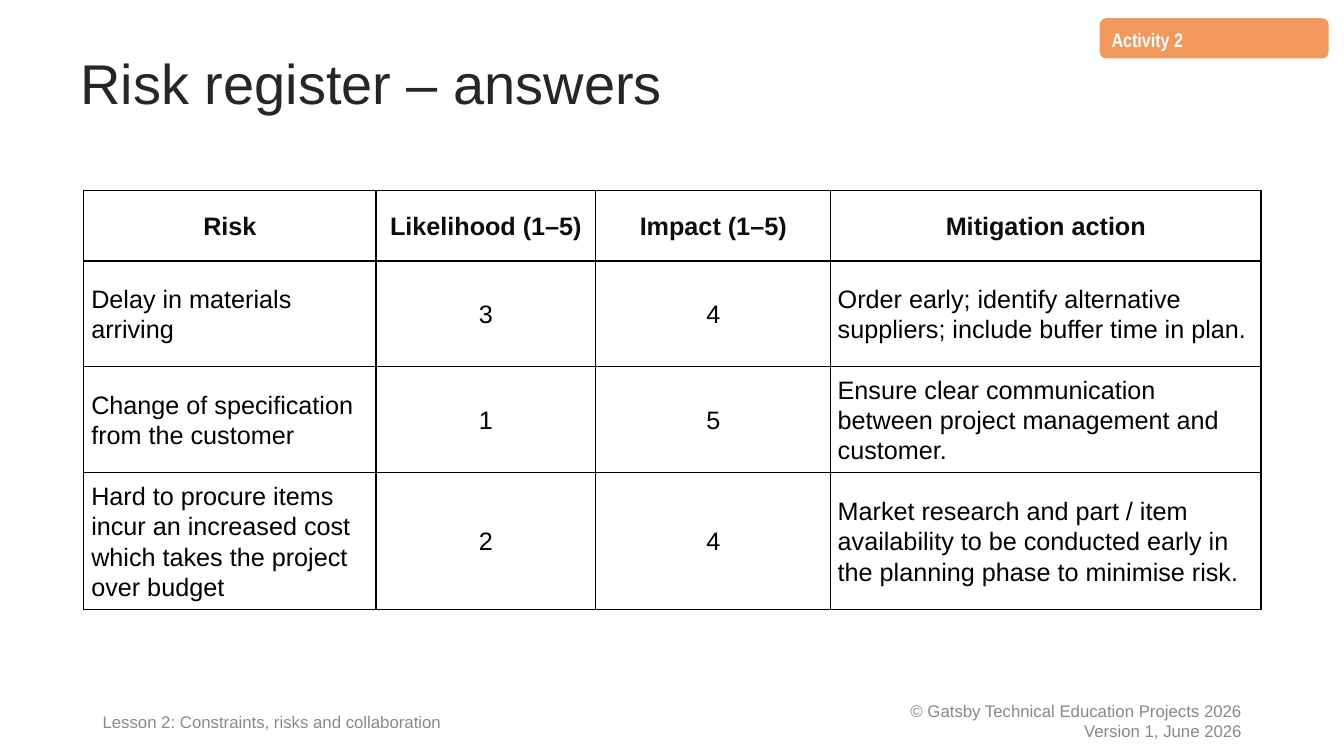
from dataclasses import dataclass

from lxml.etree import SubElement
from pptx import Presentation
from pptx.dml.color import RGBColor
from pptx.enum.shapes import MSO_SHAPE as Shape
from pptx.enum.text import MSO_ANCHOR as Anchor, PP_ALIGN as Align
from pptx.oxml.ns import qn
from pptx.util import Pt


@dataclass(frozen=True)
class Theme:
    font: str = "Arial"
    tag_font: str = "Arial Narrow"
    title: str = "262626"
    tag: str = "F1995D"
    tag_text: str = "FFFFFF"
    heading: str = "0D0D0D"
    body: str = "000000"
    border: str = "000000"
    copyright: str = "888888"
    lesson: str = "898989"
    title_size: int = 40
    tag_size: int = 14
    table_size: int = 18
    footer_size: int = 12


THEME = Theme()

HEADINGS = ["Risk", "Likelihood (1–5)", "Impact (1–5)", "Mitigation action"]
RISKS = [
    ["Delay in materials arriving", "3", "4",
     "Order early; identify alternative suppliers; include buffer time in plan."],
    ["Change of specification from the customer", "1", "5",
     "Ensure clear communication between project management and customer."],
    ["Hard to procure items incur an increased cost which takes the project over budget",
     "2", "4",
     "Market research and part / item availability to be conducted early in "
     "the planning phase to minimise risk."],
]
COLUMN_WIDTHS = [208.8, 157, 167.8, 307.4]
ROW_HEIGHTS = [50.4, 75.6, 75.6, 97.9]


def write(frame, text, size, color, font=THEME.font, bold=False,
          align=Align.LEFT, spacing=1.0):
    frame.word_wrap = True
    for index, line in enumerate(text.split("\n")):
        paragraph = frame.add_paragraph() if index else frame.paragraphs[0]
        paragraph.alignment = align
        paragraph.line_spacing = spacing
        run = paragraph.add_run()
        run.text = line
        run.font.name = font
        run.font.size = Pt(size)
        run.font.bold = bold
        run.font.color.rgb = RGBColor.from_string(color)


def add_label(slide, box, text, anchor=Anchor.MIDDLE, **style):
    frame = slide.shapes.add_textbox(*map(Pt, box)).text_frame
    frame.vertical_anchor = anchor
    write(frame, text, **style)


def add_tag(slide, box, text):
    tag = slide.shapes.add_shape(Shape.FLOWCHART_ALTERNATE_PROCESS, *map(Pt, box))
    tag.shadow.inherit = False
    tag.fill.solid()
    tag.fill.fore_color.rgb = RGBColor.from_string(THEME.tag)
    tag.line.fill.background()
    tag.text_frame.vertical_anchor = Anchor.MIDDLE
    write(tag.text_frame, text, THEME.tag_size, THEME.tag_text,
          font=THEME.tag_font, bold=True, spacing=1.08)


def set_borders(cell, width):
    properties = cell._tc.get_or_add_tcPr()
    for side in ("a:lnL", "a:lnR", "a:lnT", "a:lnB"):
        line = SubElement(properties, qn(side), w=str(Pt(width)))
        fill = SubElement(line, qn("a:solidFill"))
        SubElement(fill, qn("a:srgbClr"), val=THEME.border)


def fill_cell(cell, text, side_inset, end_inset, border, **style):
    set_borders(cell, border)
    cell.fill.background()
    cell.vertical_anchor = Anchor.MIDDLE
    cell.margin_left = cell.margin_right = Pt(side_inset)
    cell.margin_top = cell.margin_bottom = Pt(end_inset)
    write(cell.text_frame, text, THEME.table_size, spacing=1.07, **style)


def add_risk_table(slide, left, top):
    risk_table = slide.shapes.add_table(
        len(ROW_HEIGHTS), len(COLUMN_WIDTHS), Pt(left), Pt(top),
        Pt(sum(COLUMN_WIDTHS)), Pt(sum(ROW_HEIGHTS))).table
    risk_table.first_row = True
    risk_table.horz_banding = False
    for column, width in zip(risk_table.columns, COLUMN_WIDTHS):
        column.width = Pt(width)
    for row, height in zip(risk_table.rows, ROW_HEIGHTS):
        row.height = Pt(height)

    for index, heading in enumerate(HEADINGS):
        fill_cell(risk_table.cell(0, index), heading, 0.5, 0.5, 1,
                  color=THEME.heading, bold=True, align=Align.CENTER)
    for row_index, risk in enumerate(RISKS, 1):
        for index, text in enumerate(risk):
            fill_cell(risk_table.cell(row_index, index), text,
                      5.4 if index == 0 else 5, 0, 0.75 if index == 0 else 1,
                      color=THEME.body,
                      align=Align.CENTER if text.isdigit() else Align.LEFT)


def main():
    deck = Presentation()
    deck.slide_width, deck.slide_height = Pt(960), Pt(540)
    slide = deck.slides.add_slide(deck.slide_layouts[6])

    add_label(slide, (50.4, 10.8, 471.6, 76.3), "Risk register – answers",
              anchor=Anchor.BOTTOM, size=THEME.title_size, color=THEME.title,
              spacing=0.9)
    add_tag(slide, (785.5, 13, 163.5, 28.8), "Activity 2")
    add_risk_table(slide, 59.8, 136.1)
    add_label(slide, (66.2, 500.4, 331.2, 28.8),
              "Lesson 2: Constraints, risks and collaboration",
              size=THEME.footer_size, color=THEME.lesson, spacing=1.08)
    add_label(slide, (570.2, 500.4, 324, 28.8),
              "© Gatsby Technical Education Projects 2026\nVersion 1, June 2026",
              size=THEME.footer_size, color=THEME.copyright, align=Align.RIGHT)

    deck.save("out.pptx")


if __name__ == "__main__":
    main()
